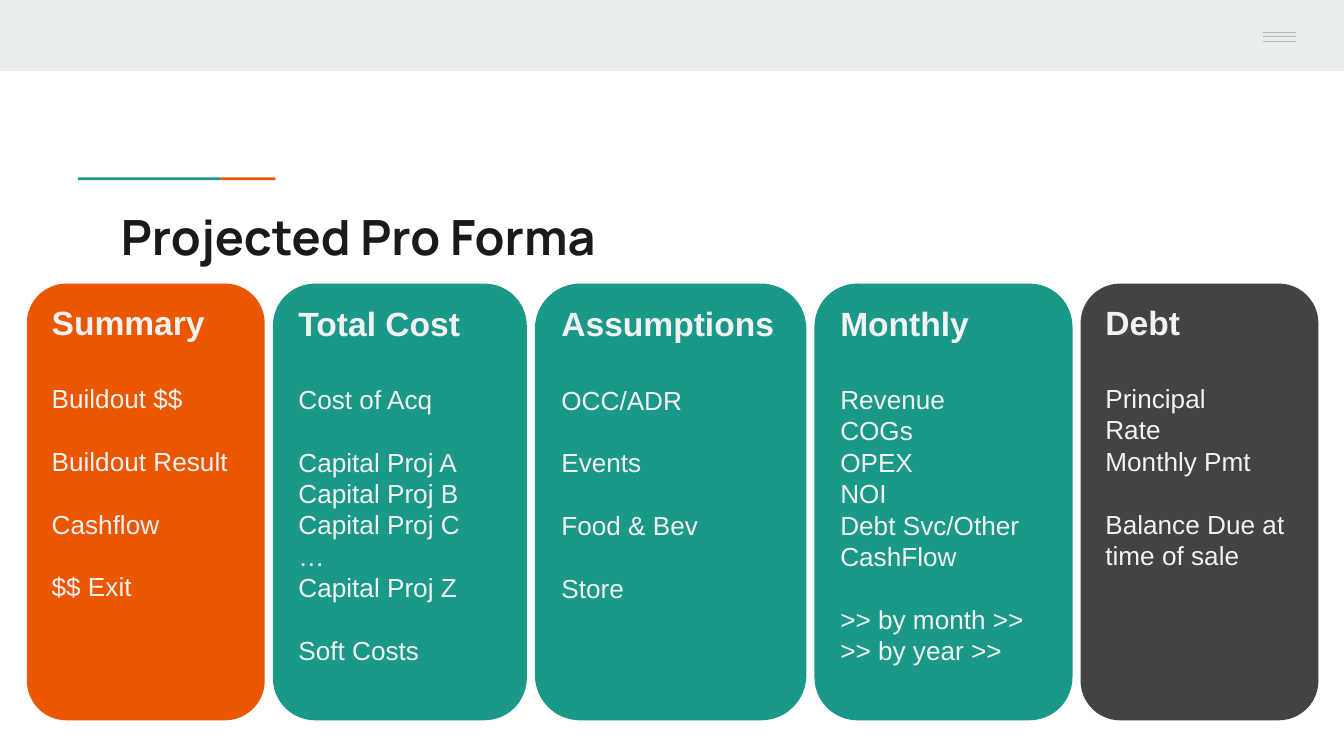
from pptx import Presentation
from pptx import util as u
from pptx.dml import color
from pptx.enum import shapes, text
from pptx.oxml import ns
from lxml import etree

TEAL, ORANGE, DARK = "1A9988", "EB5600", "434343"
PALE, GREY, INK, LIGHT = "E9EDEE", "B7B7B7", "1A1A1A", "F2F2F2"
HEAD, LINE = 21.6, 16.8  # line pitch of card heads and lists, in points


def rgb(code):
    return color.RGBColor.from_string(code)


class Deck:
    def __init__(self, wide, high):
        self.prs = Presentation()
        self.prs.slide_width = u.Inches(wide)
        self.prs.slide_height = u.Inches(high)
        self.font = "Arial"

    def page(self):
        self.slide = self.prs.slides.add_slide(self.prs.slide_layouts[5])

    def run(self, para, words, size, tint, bold=False, font=None):
        run = para.add_run()
        run.text = words
        run.font.size = u.Pt(size)
        run.font.name = font or self.font
        run.font.bold = bold
        run.font.color.rgb = rgb(tint)

    def title(self, words, box):
        shape = self.slide.shapes.title
        shape.left, shape.top, shape.width, shape.height = map(u.Inches, box)
        frame = shape.text_frame
        frame.margin_left = frame.margin_right = u.Inches(0.1)
        frame.margin_top = frame.margin_bottom = u.Inches(0.1)
        frame.vertical_anchor = text.MSO_ANCHOR.TOP
        frame.auto_size = text.MSO_AUTO_SIZE.NONE
        para = frame.paragraphs[0]
        para.alignment = text.PP_ALIGN.LEFT
        self.run(para, words, 26, INK, True, "Manrope")

    def block(self, box, fill, kind=shapes.MSO_SHAPE.RECTANGLE):
        shape = self.slide.shapes.add_shape(kind, *map(u.Inches, box))
        shape.shadow.inherit = False
        shape.fill.solid()
        shape.fill.fore_color.rgb = rgb(fill)
        shape.line.fill.background()
        return shape

    def rule(self, left, right, y, tint):
        ends = map(u.Inches, (left, y, right, y))
        line = self.slide.shapes.add_connector(shapes.MSO_CONNECTOR.STRAIGHT, *ends)
        line.line.color.rgb = rgb(tint)
        line.line.width = u.Pt(0.75)
        etree.SubElement(line._element.spPr, ns.qn("a:effectLst"))

    def card(self, box, fill, head, groups):
        shape = self.block(box, fill, shapes.MSO_SHAPE.ROUNDED_RECTANGLE)
        frame = shape.text_frame
        frame.word_wrap = True
        frame.vertical_anchor = text.MSO_ANCHOR.TOP
        para = frame.paragraphs[0]
        para.alignment = text.PP_ALIGN.LEFT
        para.line_spacing = u.Pt(HEAD)
        self.run(para, head, 18, LIGHT, True)
        # The gap before each group is one line high
        for g, group in enumerate(groups):
            for i, words in enumerate(group):
                para = frame.add_paragraph()
                para.alignment = text.PP_ALIGN.LEFT
                para.line_spacing = u.Pt(LINE)
                if i == 0:
                    para.space_before = u.Pt(LINE if g else HEAD)
                self.run(para, words, 14, LIGHT)


CARDS = [
    (1.77, ORANGE, "Summary",
     [["Buildout $$"], ["Buildout Result"], ["Cashflow"], ["$$ Exit"]]),
    (1.89, TEAL, "Total Cost",
     [["Cost of Acq"],
      ["Capital Proj A", "Capital Proj B", "Capital Proj C", "…", "Capital Proj Z"],
      ["Soft Costs"]]),
    (2.02, TEAL, "Assumptions",
     [["OCC/ADR"], ["Events"], ["Food & Bev"], ["Store"]]),
    (1.92, TEAL, "Monthly",
     [["Revenue", "COGs", "OPEX", "NOI", "Debt Svc/Other", "CashFlow"],
      [">> by month >>", ">> by year >>"]]),
    (1.77, DARK, "Debt",
     [["Principal", "Rate", "Monthly Pmt"], ["Balance Due at time of sale"]]),
]


def main():
    deck = Deck(10, 10 * 9 / 16)
    deck.page()

    # Top band with menu lines
    deck.block((0, 0, 10, 0.53), PALE)
    for y in (0.24, 0.27, 0.31):
        deck.rule(9.4, 9.64, y, GREY)

    # Two-colour accent and title
    deck.block((0.58, 1.32, 1.06, 0.02), TEAL)
    deck.block((1.64, 1.32, 0.41, 0.02), ORANGE)
    deck.title("Projected Pro Forma", (0.8, 1.44, 8.41, 0.59))

    # Row of cards with equal gaps
    left = 0.2
    for width, fill, head, groups in CARDS:
        deck.card((left, 2.11, width, 3.25), fill, head, groups)
        left += width + 0.06

    deck.prs.save("out.pptx")


if __name__ == "__main__":
    main()
